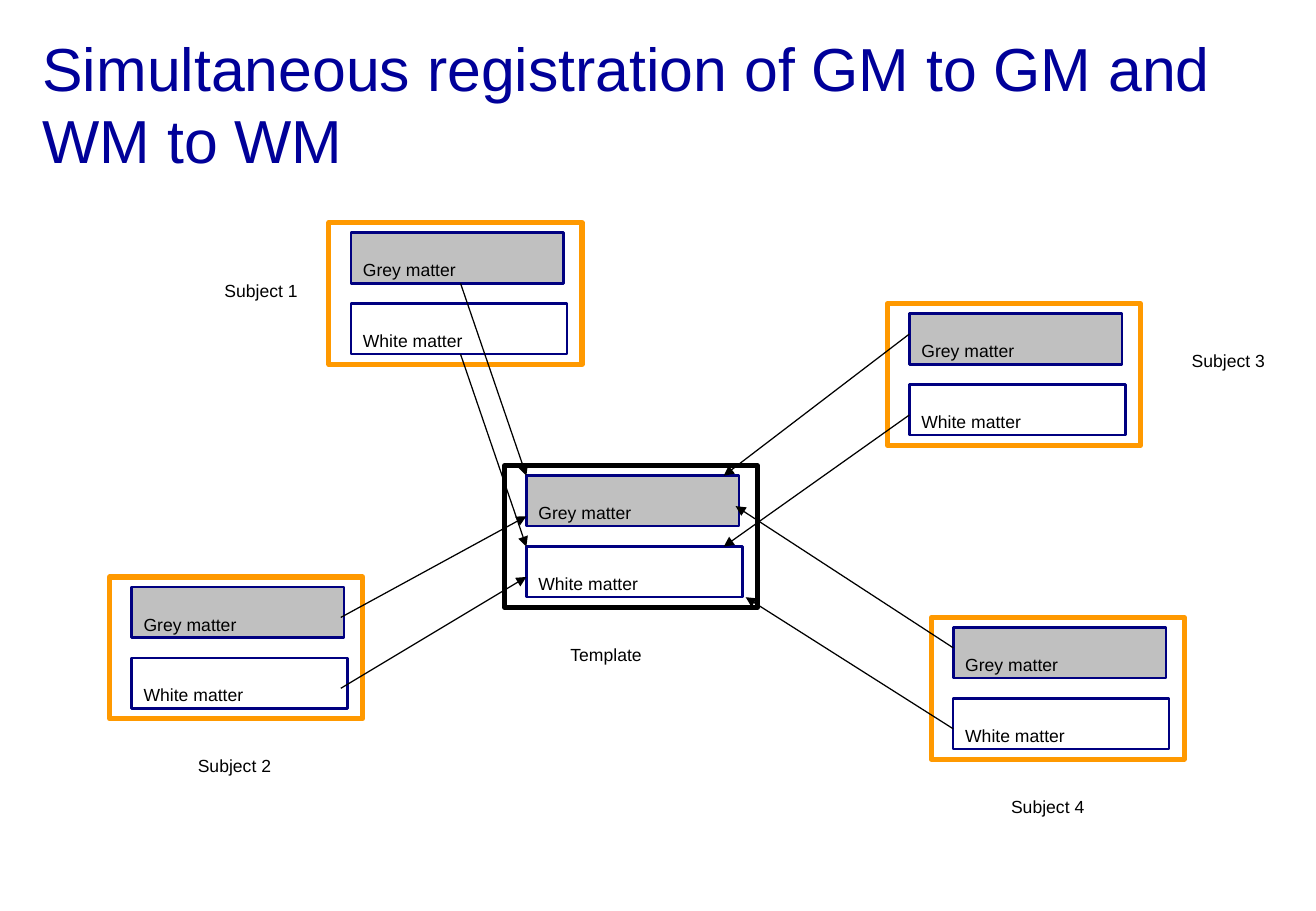
from lxml import etree
from pptx import Presentation
from pptx import util as u
from pptx.dml import color
from pptx.enum import shapes, text
from pptx.oxml import ns

COLORS = {"title": "000099", "ink": "000000", "grey": "C0C0C0",
          "navy": "000080", "orange": "FF9900"}
FONT = "Arial"
FRAME_SIZE = (150, 84)
TEMPLATE = (299, 276)
SUBJECTS = [(526, 180), (552, 366), (195, 132), (65, 342)]
LABELS = [  # words, left, top, width, centred
    ("Template", 331, 366, 97, False),
    ("Subject 1", 106.5, 150, 96.5, True),
    ("Subject 2", 90.5, 432, 97, True),
    ("Subject 3", 676, 192, 104, True),
    ("Subject 4", 571.5, 456, 99, True),
]
ARROWS = [  # start x, start y, end x, end y
    (202, 366, 312, 306), (273, 168, 312, 282),
    (539, 198, 429, 282), (565, 384, 436, 300),
    (202, 408, 312, 342), (273, 210, 312, 324),
    (539, 246, 429, 324), (565, 432, 442, 354),
]


def rgb(name):
    return color.RGBColor.from_string(COLORS[name])


def points(*values):
    return [u.Pt(value) for value in values]


def write(frame, words, size=18, ink="ink", align=text.PP_ALIGN.LEFT,
          anchor=text.MSO_ANCHOR.TOP, lowered=True):
    frame.word_wrap = True
    frame.auto_size = text.MSO_AUTO_SIZE.NONE
    frame.vertical_anchor = anchor
    para = frame.paragraphs[0]
    para.alignment = align
    span = para.add_run()
    span.text = words
    span.font.name = FONT
    span.font.size = u.Pt(size)
    span.font.color.rgb = rgb(ink)
    if lowered:  # subscript text
        span._r.get_or_add_rPr().set("baseline", "-25000")


def add_box(parent, area, line, width, fill=None):
    box = parent.add_shape(shapes.MSO_SHAPE.RECTANGLE, *points(*area))
    box.shadow.inherit = False
    box.line.color.rgb = rgb(line)
    box.line.width = u.Pt(width)
    if fill:
        box.fill.solid()
        box.fill.fore_color.rgb = rgb(fill)
    else:
        box.fill.background()
    return box


def add_tissue_pair(parent, left, top, line):
    """Grey and white matter boxes inside one frame."""
    for words, drop, width, fill in (("Grey matter", 6, 126, "grey"),
                                     ("White matter", 48, 128, None)):
        box = add_box(parent, (left + 13, top + drop, width, 30), "navy", 1.5, fill)
        write(box.text_frame, words)
    add_box(parent, (left, top, *FRAME_SIZE), line, 3)


def add_arrow(page, ends):
    arrow = page.shapes.add_connector(shapes.MSO_CONNECTOR.STRAIGHT, *points(*ends))
    arrow.line.color.rgb = rgb("ink")
    arrow.line.width = u.Pt(0.75)
    etree.SubElement(arrow.line._get_or_add_ln(), ns.qn("a:tailEnd"), type="triangle")
    etree.SubElement(arrow._element.spPr, ns.qn("a:effectLst"))


def add_title(page, left, top, width, height):
    title = page.shapes.title
    title.left, title.top, title.width, title.height = points(left, top, width, height)
    write(title.text_frame, "Simultaneous registration of GM to GM and WM to WM",
          size=36, ink="title", anchor=text.MSO_ANCHOR.BOTTOM, lowered=False)


def add_label(page, words, left, top, width, centred):
    box = page.shapes.add_textbox(*points(left, top, width, 29))
    write(box.text_frame, words,
          align=text.PP_ALIGN.CENTER if centred else text.PP_ALIGN.LEFT)


def main():
    deck = Presentation()
    deck.slide_width, deck.slide_height = points(780, 540)
    page = deck.slides.add_slide(deck.slide_layouts[5])
    add_title(page, 18, 18, 744, 90)

    # Template in the middle, subjects around it
    add_tissue_pair(page.shapes, *TEMPLATE, "ink")
    for corner in SUBJECTS:
        add_tissue_pair(page.shapes.add_group_shape().shapes, *corner, "orange")

    # Registration arrows and captions
    for ends in ARROWS:
        add_arrow(page, ends)
    for label in LABELS:
        add_label(page, *label)
    deck.save("out.pptx")


if __name__ == "__main__":
    main()
